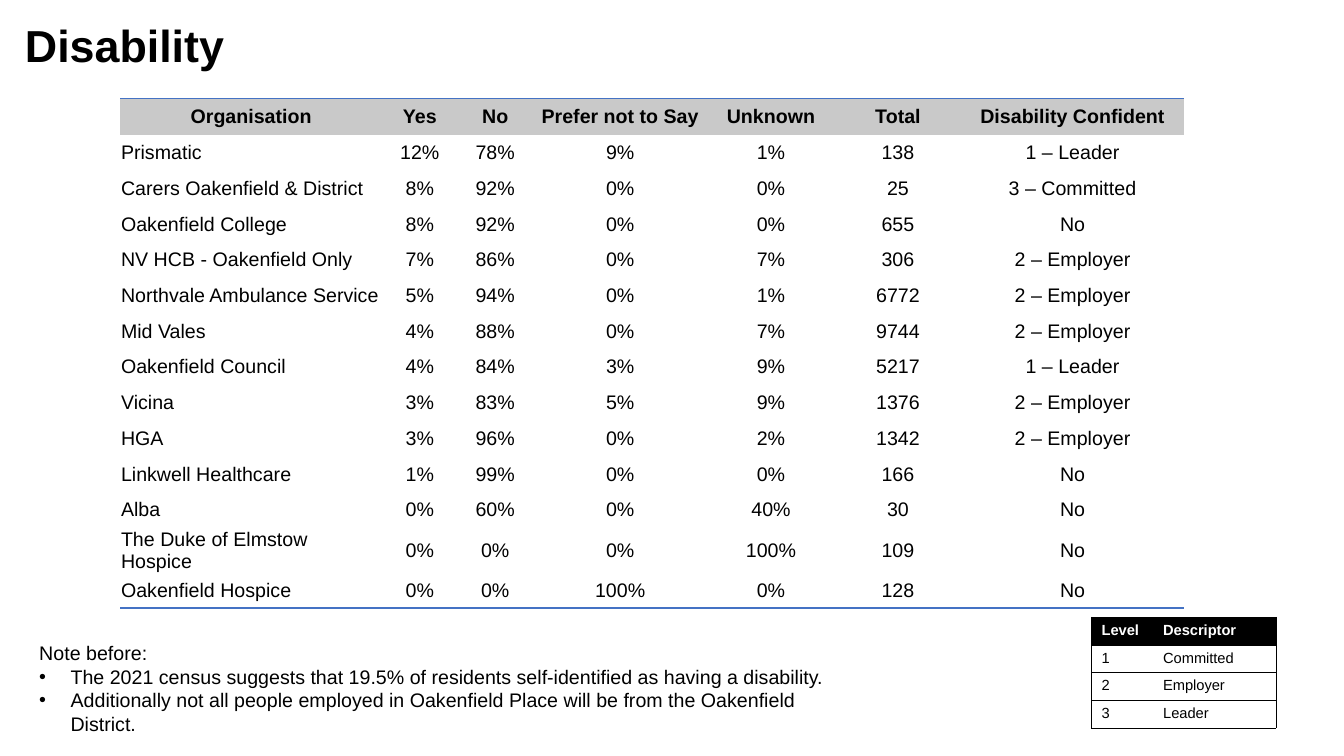
from lxml import etree
from pptx import Presentation
from pptx import util as u
from pptx.dml.color import RGBColor
from pptx.enum import text
from pptx.oxml.ns import qn

FONT = "Arial"
BLACK, WHITE, GREY, BLUE = "000000", "FFFFFF", "C9C9C9", "4472C4"
NO_TABLE_STYLE = "{2D5ABB26-0587-4C30-8999-92F81FD0307C}"

TITLE = "Disability"
RESULTS = [
    ("Organisation", "Yes", "No", "Prefer not to Say", "Unknown", "Total", "Disability Confident"),
    ("Prismatic", "12%", "78%", "9%", "1%", "138", "1 – Leader"),
    ("Carers Oakenfield & District", "8%", "92%", "0%", "0%", "25", "3 – Committed"),
    ("Oakenfield College", "8%", "92%", "0%", "0%", "655", "No"),
    ("NV HCB - Oakenfield Only", "7%", "86%", "0%", "7%", "306", "2 – Employer"),
    ("Northvale Ambulance Service", "5%", "94%", "0%", "1%", "6772", "2 – Employer"),
    ("Mid Vales", "4%", "88%", "0%", "7%", "9744", "2 – Employer"),
    ("Oakenfield Council", "4%", "84%", "3%", "9%", "5217", "1 – Leader"),
    ("Vicina", "3%", "83%", "5%", "9%", "1376", "2 – Employer"),
    ("HGA", "3%", "96%", "0%", "2%", "1342", "2 – Employer"),
    ("Linkwell Healthcare", "1%", "99%", "0%", "0%", "166", "No"),
    ("Alba", "0%", "60%", "0%", "40%", "30", "No"),
    ("The Duke of Elmstow Hospice", "0%", "0%", "0%", "100%", "109", "No"),
    ("Oakenfield Hospice", "0%", "0%", "100%", "0%", "128", "No"),
]
RESULT_WIDTHS = (6.6, 1.9, 1.9, 4.4, 3.2, 3.2, 5.6)
LEVELS = [("Level", "Descriptor"), ("1", "Committed"), ("2", "Employer"), ("3", "Leader")]
LEVEL_WIDTHS = (1.55, 3.1)
NOTE_HEADING = "Note before:"
NOTES = [
    "The 2021 census suggests that 19.5% of residents self-identified as having a disability.",
    "Additionally not all people employed in Oakenfield Place will be from the Oakenfield District.",
]


def rgb(colour):
    return RGBColor.from_string(colour)


def format_runs(paragraph, size, colour=BLACK, bold=False):
    for run in paragraph.runs:
        run.font.name = FONT
        run.font.size = u.Pt(size)
        run.font.bold = bold
        run.font.color.rgb = rgb(colour)


def add_border(cell, side, colour, points):
    """Draw one cell edge; sides go in the order L, R, T, B, before the fill."""
    line = etree.SubElement(cell._tc.get_or_add_tcPr(), qn(f"a:ln{side}"), w=str(u.Pt(points)))
    fill = etree.SubElement(line, qn("a:solidFill"))
    etree.SubElement(fill, qn("a:srgbClr"), val=colour)


def add_table(slide, rows, left, top, widths, row_height):
    frame = slide.shapes.add_table(len(rows), len(widths), u.Cm(left), u.Cm(top),
                                   u.Cm(sum(widths)), u.Cm(row_height * len(rows)))
    table = frame.table
    table.horz_banding = False
    table._tbl.tblPr.find(qn("a:tableStyleId")).text = NO_TABLE_STYLE
    for column, width in zip(table.columns, widths):
        column.width = u.Cm(width)
    for row, values in zip(table.rows, rows):
        row.height = u.Cm(row_height)
        for cell, value in zip(row.cells, values):
            cell.text_frame.text = value
    return table


def fill_cell(cell, colour):
    if colour:
        cell.fill.solid()
        cell.fill.fore_color.rgb = rgb(colour)
    else:
        cell.fill.background()


def add_results(slide):
    table = add_table(slide, RESULTS, 3.03, 2.49, RESULT_WIDTHS, 0.9)
    last = len(RESULTS) - 1
    for i, row in enumerate(table.rows):
        for j, cell in enumerate(row.cells):
            cell.margin_left = cell.margin_right = cell.margin_top = u.Cm(0.02)
            cell.margin_bottom = 0
            cell.vertical_anchor = text.MSO_ANCHOR.MIDDLE
            paragraph = cell.text_frame.paragraphs[0]
            if i == 0 or j > 0:
                paragraph.alignment = text.PP_ALIGN.CENTER
            format_runs(paragraph, 14, bold=i == 0)
            if i in (0, last):
                add_border(cell, "T" if i == 0 else "B", BLUE, 1)
            fill_cell(cell, GREY if i == 0 else None)


def add_levels(slide):
    table = add_table(slide, LEVELS, 27.51, 15.55, LEVEL_WIDTHS, 0.7)
    for i, row in enumerate(table.rows):
        for j, cell in enumerate(row.cells):
            header = i == 0
            format_runs(cell.text_frame.paragraphs[0], 10.5, WHITE if header else BLACK, header)
            for side in ("L" if j == 0 else "R", "T", "B"):
                add_border(cell, side, BLACK, 0.5)
            fill_cell(cell, BLACK if header else None)


def add_text_box(slide, left, top, width, height):
    frame = slide.shapes.add_textbox(u.Cm(left), u.Cm(top), u.Cm(width), u.Cm(height)).text_frame
    frame.word_wrap = True
    return frame


def add_bullet(paragraph):
    properties = paragraph._p.get_or_add_pPr()
    properties.set("marL", str(u.Cm(0.79)))
    properties.set("indent", str(-u.Cm(0.79)))
    etree.SubElement(properties, qn("a:buFont"), typeface=FONT)
    etree.SubElement(properties, qn("a:buChar"), char="•")


def add_title(slide):
    frame = add_text_box(slide, 0.38, 0.48, 29.21, 1.47)
    frame.vertical_anchor = text.MSO_ANCHOR.MIDDLE
    frame.text = TITLE
    frame.paragraphs[0].line_spacing = 0.9
    format_runs(frame.paragraphs[0], 32, bold=True)


def add_notes(slide):
    frame = add_text_box(slide, 0.74, 16.03, 21.03, 2.06)
    frame.auto_size = text.MSO_AUTO_SIZE.SHAPE_TO_FIT_TEXT
    frame.text = "\n".join([NOTE_HEADING, *NOTES])
    for paragraph in frame.paragraphs:
        format_runs(paragraph, 14)
    for paragraph in frame.paragraphs[1:]:
        add_bullet(paragraph)


def main():
    presentation = Presentation()
    presentation.slide_width, presentation.slide_height = u.Cm(33.87), u.Cm(19.05)
    slide = presentation.slides.add_slide(presentation.slide_layouts[6])
    add_results(slide)
    add_title(slide)
    add_notes(slide)
    add_levels(slide)
    presentation.save("out.pptx")


if __name__ == "__main__":
    main()
